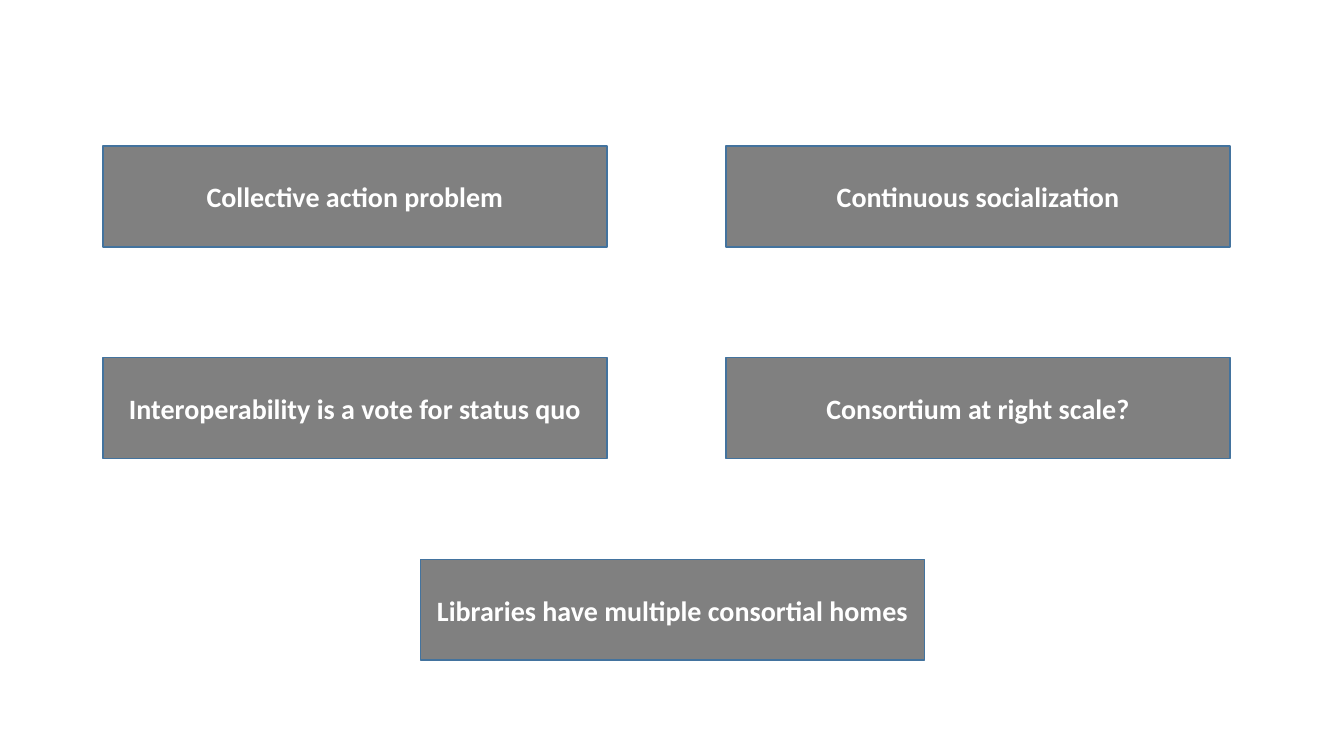
"""Build a slide of five consortium challenges in boxes."""
from dataclasses import dataclass

from pptx import Presentation
from pptx.dml.color import RGBColor
from pptx.enum import shapes, text
from pptx.util import Inches, Pt

COLUMNS = [
    (1.02, ["Collective action problem", "Interoperability is a vote for status quo"]),
    (7.2, ["Continuous socialization", "Consortium at right scale?"]),
]
CLOSING = "Libraries have multiple consortial homes"


@dataclass(frozen=True)
class Theme:
    fill: RGBColor = RGBColor.from_string("808080")
    line: RGBColor = RGBColor.from_string("43739E")
    ink: RGBColor = RGBColor.from_string("FFFFFF")
    font: str = "Calibri"
    size: int = 20
    border: int = 1


THEME = Theme()
BOX_WIDTH, BOX_HEIGHT = 5, 1
TOP, ROW_STEP = 1.45, 2.1
CLOSING_LEFT, CLOSING_TOP = 4.17, 5.55


def add_box(page, label, left, top):
    box = page.shapes.add_shape(
        shapes.MSO_SHAPE.RECTANGLE,
        Inches(left), Inches(top), Inches(BOX_WIDTH), Inches(BOX_HEIGHT),
    )
    box.shadow.inherit = False
    box.fill.solid()
    box.fill.fore_color.rgb = THEME.fill
    box.line.color.rgb = THEME.line
    box.line.width = Pt(THEME.border)
    frame = box.text_frame
    frame.word_wrap = True
    frame.vertical_anchor = text.MSO_ANCHOR.MIDDLE
    para = frame.paragraphs[0]
    para.text = label
    para.alignment = text.PP_ALIGN.CENTER
    para.font.name = THEME.font
    para.font.size = Pt(THEME.size)
    para.font.bold = True
    para.font.color.rgb = THEME.ink


def main():
    deck = Presentation()
    deck.slide_width, deck.slide_height = Inches(13.33), Inches(7.5)
    page = deck.slides.add_slide(deck.slide_layouts[6])
    for left, labels in COLUMNS:
        for row, label in enumerate(labels):
            add_box(page, label, left, TOP + row * ROW_STEP)
    add_box(page, CLOSING, CLOSING_LEFT, CLOSING_TOP)
    deck.save("out.pptx")


if __name__ == "__main__":
    main()
